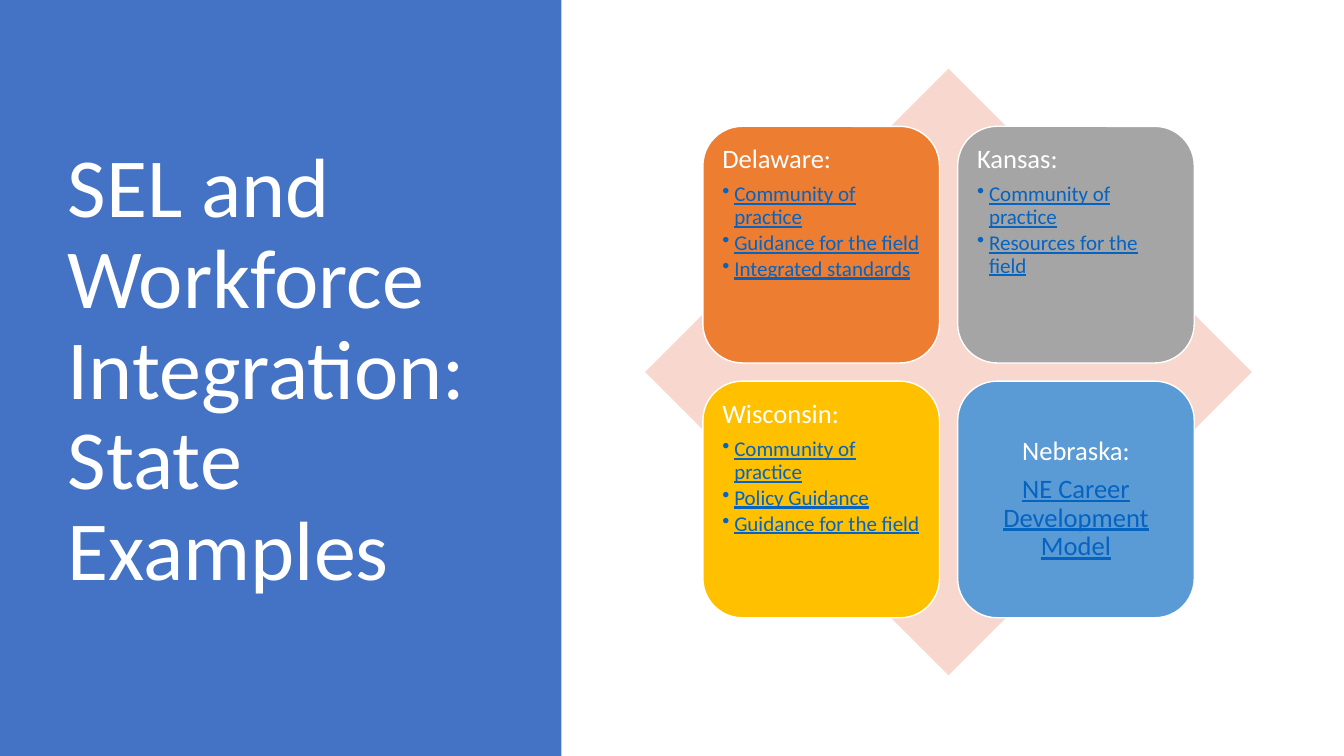
from dataclasses import dataclass

from lxml.etree import SubElement
from pptx import Presentation
from pptx.dml.color import RGBColor as RGB
from pptx.enum.shapes import MSO_SHAPE as SHAPE
from pptx.enum.text import MSO_ANCHOR as ANCHOR, MSO_AUTO_SIZE as AUTO, PP_ALIGN as ALIGN
from pptx.oxml.ns import qn
from pptx.util import Cm, Pt


@dataclass(frozen=True)
class Theme:
    font: str = "Calibri"
    white: str = "FFFFFF"
    panel: str = "4472C4"
    diamond: str = "F8D7CE"
    link: str = "0563C1"
    title: int = 60
    heading: int = 19
    item: int = 15


THEME = Theme()
TITLE = "SEL and Workforce Integration: State Examples"
STATES = [
    ("Delaware:", "ED7D31", True,
     ["Community of practice", "Guidance for the field", "Integrated standards"]),
    ("Kansas:", "A5A5A5", True,
     ["Community of practice", "Resources for the field"]),
    ("Wisconsin:", "FFC000", True,
     ["Community of practice", "Policy Guidance", "Guidance for the field"]),
    ("Nebraska:", "5B9BD5", False, ["NE Career Development Model"]),
]


def set_format(target, values):
    for name, value in values.items():
        setattr(target, name, value)


def add_box(shapes, kind, x, y, w, h, fill, line=None):
    sp = shapes.add_shape(kind, Cm(x), Cm(y), Cm(w), Cm(h))
    sp.shadow.inherit = False
    sp.fill.solid()
    sp.fill.fore_color.rgb = RGB.from_string(fill)
    if line:
        sp.line.color.rgb = RGB.from_string(line)
        sp.line.width = Pt(1)
    else:
        sp.line.fill.background()
    return sp


def write(p, text, size, color, align=ALIGN.LEFT, after=0, underline=False):
    set_format(p, {"alignment": align, "line_spacing": 0.9,
                   "space_before": Pt(0), "space_after": Pt(after)})
    r = p.add_run()
    r.text = text
    set_format(r.font, {"name": THEME.font, "size": Pt(size), "underline": underline})
    r.font.color.rgb = RGB.from_string(color)


def add_bullet(p):
    pPr = p._p.get_or_add_pPr()
    pPr.set("marL", str(Cm(0.3)))
    pPr.set("indent", str(-Cm(0.3)))
    SubElement(pPr, qn("a:buChar"), char="•")


def add_title_panel(s, x, y, w, h):
    panel = add_box(s.shapes, SHAPE.RECTANGLE, x, y, w, h, THEME.panel)
    title = s.shapes.title
    title._element.addprevious(panel._element)
    set_format(title, {"left": Cm(x + 1.45), "top": Cm(y + 1.73),
                       "width": Cm(10.57), "height": Cm(h - 2 * 1.88)})
    tf = title.text_frame
    set_format(tf, {"word_wrap": True, "auto_size": AUTO.NONE,
                    "vertical_anchor": ANCHOR.MIDDLE})
    write(tf.paragraphs[0], TITLE, THEME.title, THEME.white)


def add_state(shapes, x, y, size, state):
    heading, fill, bulleted, items = state
    sp = add_box(shapes, SHAPE.ROUNDED_RECTANGLE, x, y, size, size, fill, THEME.white)
    tf = sp.text_frame
    inset = Cm(0.2)
    set_format(tf, {"word_wrap": True,
                    "vertical_anchor": ANCHOR.TOP if bulleted else ANCHOR.MIDDLE,
                    "margin_left": inset, "margin_right": inset,
                    "margin_top": inset, "margin_bottom": inset})
    align = ALIGN.LEFT if bulleted else ALIGN.CENTER
    item_size, after = (THEME.item, 2.25) if bulleted else (THEME.heading, 6.65)
    write(tf.paragraphs[0], heading, THEME.heading, THEME.white, align, 6.65)
    for item in items:
        p = tf.add_paragraph()
        if bulleted:
            add_bullet(p)
        write(p, item, item_size, THEME.link, align, after, True)


def add_state_matrix(s, x, y, size):
    shapes = s.shapes.add_group_shape().shapes
    add_box(shapes, SHAPE.DIAMOND, x, y, size, size, THEME.diamond)
    margin, tile = size * 0.095, size * 0.39
    pitch = size - 2 * margin - tile
    for i, state in enumerate(STATES):
        row, col = divmod(i, 2)
        add_state(shapes, x + margin + col * pitch, y + margin + row * pitch, tile, state)


def main():
    prs = Presentation()
    set_format(prs, {"slide_width": Cm(33.87), "slide_height": Cm(19.05)})
    s = prs.slides.add_slide(prs.slide_layouts[5])
    add_title_panel(s, 0, 0, 14.15, 19.05)
    add_state_matrix(s, 16.26, 1.73, 15.29)
    prs.save("out.pptx")


if __name__ == "__main__":
    main()
